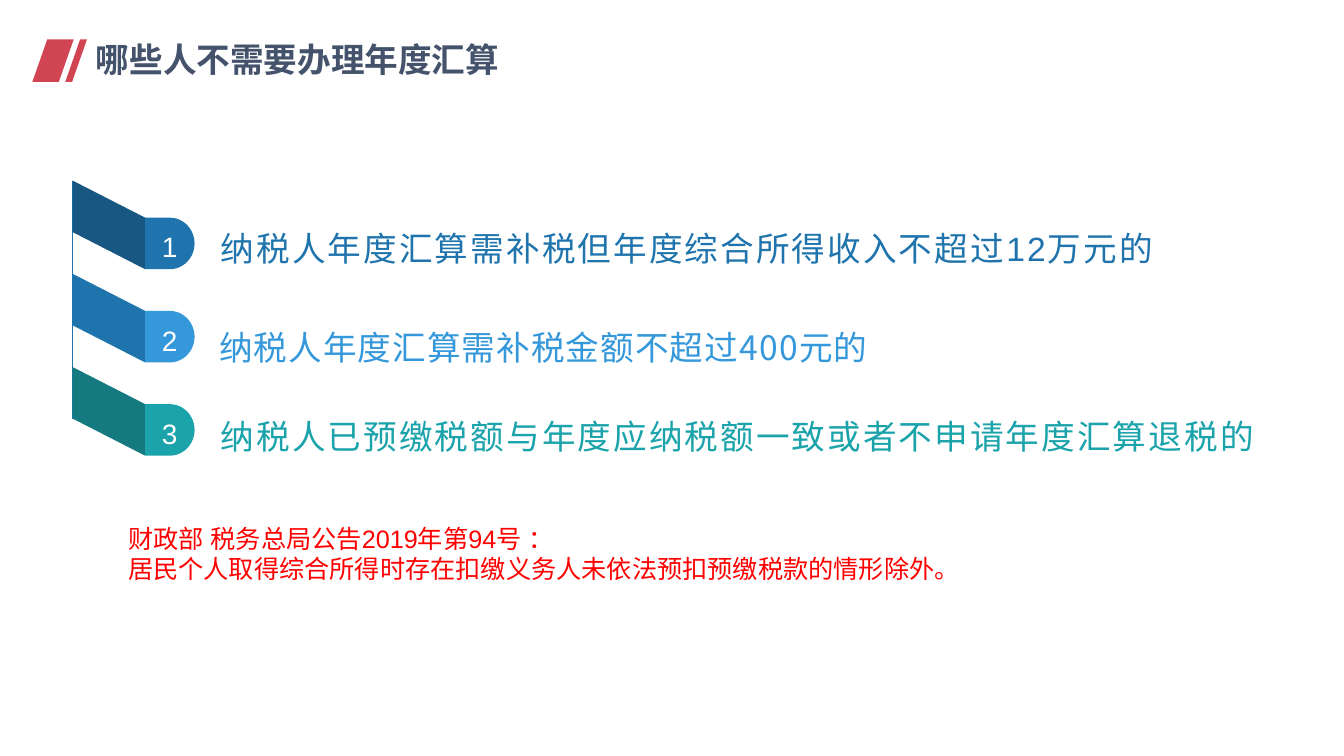
"""Builds the slide on who does not need to file the annual tax settlement."""
import pptx
import pptx.util
import pptx.dml.color
import pptx.enum.shapes
import pptx.enum.text
import lxml.etree

Pt = pptx.util.Pt
RGB = pptx.dml.color.RGBColor
SHAPE = pptx.enum.shapes.MSO_SHAPE
MIDDLE = pptx.enum.text.MSO_ANCHOR.MIDDLE
TOP = pptx.enum.text.MSO_ANCHOR.TOP
CENTER = pptx.enum.text.PP_ALIGN.CENTER

CRIMSON = RGB(0xD1, 0x45, 0x52)
SLATE = RGB(0x44, 0x53, 0x6B)
NAVY = RGB(0x17, 0x57, 0x82)
BLUE = RGB(0x1F, 0x74, 0xAD)
SKY = RGB(0x34, 0x98, 0xDB)
DARK_TEAL = RGB(0x14, 0x7A, 0x7F)
TEAL = RGB(0x1A, 0xA3, 0xAA)
RED = RGB(0xFF, 0, 0)
WHITE = RGB(0xFF, 0xFF, 0xFF)
CJK = "Noto Sans CJK SC"

deck = pptx.Presentation()
deck.slide_width, deck.slide_height = Pt(960), Pt(540)
slide = deck.slides.add_slide(deck.slide_layouts[6])
shapes = slide.shapes


def polygon(corners, color):
    builder = shapes.build_freeform(Pt(corners[0][0]), Pt(corners[0][1]))
    builder.add_line_segments([(Pt(x), Pt(y)) for x, y in corners[1:]])
    outline = builder.convert_to_shape()
    outline.shadow.inherit = False
    outline.fill.solid()
    outline.fill.fore_color.rgb = color
    outline.line.fill.background()


def write(holder, lines, size, color, font="Arial", tracking=0, bold=False,
          insets=(7.2, 3.6, 7.2, 3.6), anchor=TOP, **spacing):
    frame = holder.text_frame
    frame.word_wrap = True
    frame.vertical_anchor = anchor
    for side, inset in zip(("left", "top", "right", "bottom"), insets):
        setattr(frame, f"margin_{side}", Pt(inset))
    frame.text = "\n".join(lines)
    for paragraph in frame.paragraphs:
        for name, value in spacing.items():
            setattr(paragraph, name, value)
        for run in paragraph.runs:
            for name, value in dict(size=Pt(size), name=font, bold=bold).items():
                setattr(run.font, name, value)
            run.font.color.rgb = color
            properties = run.font._element
            properties.set("spc", str(round(tracking * 100)))
            east_asian = lxml.etree.SubElement(properties, pptx.oxml.ns.qn("a:ea"))
            east_asian.set("typeface", font)


for left, width in ((23.1, 18.9), (46.6, 4.9)):
    polygon([(left + 10.6, 28.2), (left + 10.6 + width, 28.2),
             (left + width, 58.6), (left, 58.6)], CRIMSON)

title = shapes.add_textbox(Pt(68.6), Pt(27.4), Pt(308), Pt(30.2))
write(title, ["哪些人不需要办理年度汇算"], 24, SLATE, CJK, bold=True,
      insets=(0, 0.7, 0, 0))

spine = shapes.add_connector(pptx.enum.shapes.MSO_CONNECTOR.STRAIGHT,
                             Pt(51.9), Pt(129), Pt(51.9), Pt(299))
spine.line.color.rgb = BLUE
spine.line.width = Pt(0.5)
lxml.etree.SubElement(spine._element.spPr, pptx.oxml.ns.qn("a:effectLst"))

LOOSE = dict(tracking=1.5, anchor=MIDDLE, line_spacing=1.2)
exemptions = (
    (NAVY, BLUE, "纳税人年度汇算需补税但年度综合所得收入不超过12万元的",
     (155.5, 685.4, 38.2), LOOSE),
    (BLUE, SKY, "纳税人年度汇算需补税金额不超过400元的",
     (216, 635, 49.7),
     dict(font=CJK, tracking=0.8, line_spacing=1.5, insets=(5.8, 2.9, 5.8, 2.9))),
    (DARK_TEAL, TEAL, "纳税人已预缴税额与年度应纳税额一致或者不申请年度汇算退税的",
     (288.7, 762.5, 40.3), LOOSE),
)
for index, (fold, color, wording, (top, width, height), style) in enumerate(exemptions):
    ribbon_top = 129 + index * 66.6
    polygon([(51.9, ribbon_top), (103.7, ribbon_top + 26.5),
             (103.7, ribbon_top + 63.3), (51.9, ribbon_top + 36.8)], fold)

    tab = shapes.add_shape(SHAPE.FLOWCHART_DELAY, Pt(103.7), Pt(ribbon_top + 26.5),
                           Pt(35.3), Pt(36.8))
    tab.shadow.inherit = False
    tab.fill.solid()
    tab.fill.fore_color.rgb = color
    tab.line.fill.background()
    write(tab, [str(index + 1)], 20, WHITE, tracking=3, insets=(5, 0, 0, 0),
          anchor=MIDDLE, alignment=CENTER, line_spacing=1.2)

    statement = shapes.add_textbox(Pt(150.7), Pt(top), Pt(width), Pt(height))
    write(statement, [wording], 24, color, **style)

notice = shapes.add_textbox(Pt(84.4), Pt(370), Pt(810), Pt(50.4))
write(notice, ["财政部 税务总局公告2019年第94号 ：",
               "居民个人取得综合所得时存在扣缴义务人未依法预扣预缴税款的情形除外。"], 18, RED)

deck.save("out.pptx")
